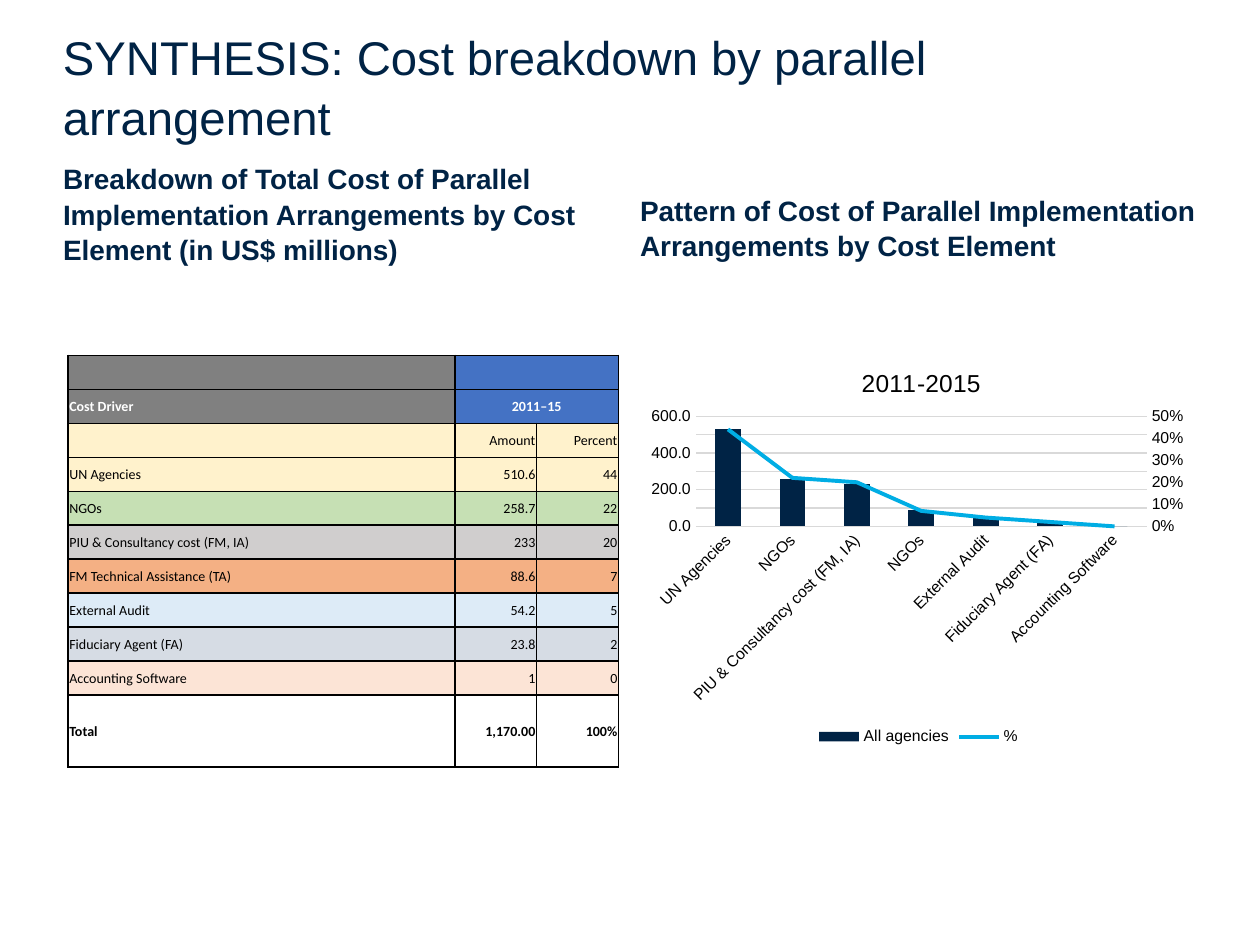
"""Build the cost breakdown slide with its table and combined chart."""
from dataclasses import dataclass
from lxml import etree
from pptx import Presentation
from pptx import util as u
from pptx.chart.data import CategoryChartData
from pptx.dml.color import RGBColor
from pptx.enum import chart as charts
from pptx.enum import text
from pptx.oxml import parse_xml
from pptx.oxml.ns import nsdecls, qn

@dataclass(frozen=True)
class Theme:
    navy: str = "002345"
    cyan: str = "00ADE4"
    black: str = "000000"
    white: str = "FFFFFF"
    grid: str = "D9D9D9"
    gray: str = "808080"
    blue: str = "4472C4"
    font: str = "Arial"
    table_font: str = "Calibri"
    title_size: int = 27
    heading_size: int = 16
    chart_title_size: int = 14
    label_size: int = 9
    table_size: int = 8

@dataclass(frozen=True)
class Heading:
    words: str
    left: float
    top: float
    width: float
    height: float
    size: int = 16

@dataclass(frozen=True)
class CostRow:
    cells: tuple[str, str, str]
    fill: str
    header: bool = False
    bold: bool = False
    height: float = 0.27

THEME = Theme()
HEADINGS = [
    Heading("SYNTHESIS: Cost breakdown by parallel arrangement", 0.5, 0.25, 9, 0.9, THEME.title_size),
    Heading("Breakdown of Total Cost of Parallel Implementation Arrangements "
            "by Cost Element (in US$ millions)", 0.5, 1.3, 4.42, 0.81, THEME.heading_size),
    Heading("Pattern of Cost of Parallel Implementation Arrangements by Cost Element",
            5.08, 1.5, 4.45, 0.58, THEME.heading_size),
]
COST_ROWS = [
    CostRow(("", "", ""), THEME.gray, header=True),
    CostRow(("Cost Driver", "2011–15", ""), THEME.gray, header=True, bold=True),
    CostRow(("", "Amount", "Percent"), "FFF2CC"),
    CostRow(("UN Agencies", "510.6", "44"), "FFF2CC"),
    CostRow(("NGOs", "258.7", "22"), "C6E0B4"),
    CostRow(("PIU & Consultancy cost (FM, IA)", "233", "20"), "D0CECE"),
    CostRow(("FM Technical Assistance (TA)", "88.6", "7"), "F4B084"),
    CostRow(("External Audit", "54.2", "5"), "DDEBF7"),
    CostRow(("Fiduciary Agent (FA)", "23.8", "2"), "D6DCE4"),
    CostRow(("Accounting Software", "1", "0"), "FCE4D6"),
    CostRow(("Total", "1,170.00", "100%"), THEME.white, bold=True, height=0.57),
]
COLUMN_WIDTHS = (3.07, 0.65, 0.65)
CATEGORIES = ["UN Agencies", "NGOs", "PIU & Consultancy cost (FM, IA)", "NGOs",
              "External Audit", "Fiduciary Agent (FA)", "Accounting Software"]
AMOUNTS = [530, 260, 230, 90, 50, 20, 0]
SHARES = [0.44, 0.22, 0.2, 0.07, 0.04, 0.02, 0]
LINE_PLOT = f"""<c:lineChart {nsdecls("c")}><c:grouping val="standard"/><c:varyColors val="0"/>
<c:marker val="1"/><c:axId val="501"/><c:axId val="502"/></c:lineChart>"""
SHARE_AXIS = f"""<c:valAx {nsdecls("c", "a")}><c:axId val="502"/>
<c:scaling><c:orientation val="minMax"/><c:max val="0.5"/><c:min val="0"/></c:scaling>
<c:delete val="0"/><c:axPos val="r"/><c:numFmt formatCode="0%" sourceLinked="0"/>
<c:majorTickMark val="none"/><c:minorTickMark val="none"/><c:tickLblPos val="nextTo"/>
<c:spPr><a:ln><a:noFill/></a:ln></c:spPr>
<c:crossAx val="501"/><c:crosses val="max"/><c:majorUnit val="0.1"/></c:valAx>"""
HIDDEN_AXIS = f"""<c:catAx {nsdecls("c")}><c:axId val="501"/><c:scaling><c:orientation val="minMax"/></c:scaling>
<c:delete val="1"/><c:axPos val="b"/><c:crossAx val="502"/><c:crosses val="autoZero"/></c:catAx>"""

def paint(fill, color: str) -> None:
    """Fill with one solid colour."""
    fill.solid()
    fill.fore_color.rgb = RGBColor.from_string(color)

def style_font(font, size: int, color: str, name: str, bold: bool = False) -> None:
    """Give a font its size, colour, face and weight."""
    font.size, font.name, font.bold = u.Pt(size), name, bold
    font.color.rgb = RGBColor.from_string(color)

def style_line(line, color: str, width: float) -> None:
    """Give a line its colour and width."""
    line.color.rgb, line.width = RGBColor.from_string(color), u.Pt(width)

def add_heading(slide, heading: Heading) -> None:
    """Add one bottom-anchored heading without insets."""
    places = (heading.left, heading.top, heading.width, heading.height)
    frame = slide.shapes.add_textbox(*map(u.Inches, places)).text_frame
    frame.word_wrap, frame.vertical_anchor = True, text.MSO_ANCHOR.BOTTOM
    frame.margin_left = frame.margin_right = frame.margin_top = frame.margin_bottom = 0
    frame.text = heading.words
    paragraph = frame.paragraphs[0]
    paragraph.line_spacing = 1.05
    bold = heading.size == THEME.heading_size
    style_font(paragraph.runs[0].font, heading.size, THEME.navy, THEME.font, bold)

def fill_cell(cell, row: CostRow, column: int) -> None:
    """Set the text, fill and borders of one table cell."""
    cell.margin_left = cell.margin_right = cell.margin_top = u.Inches(0.01)
    cell.margin_bottom, cell.vertical_anchor = 0, text.MSO_ANCHOR.MIDDLE
    paint(cell.fill, THEME.blue if column and row.header else row.fill)
    for position, side in enumerate(("lnL", "lnR", "lnT", "lnB")):
        cell._tc.get_or_add_tcPr().insert(position, parse_xml(
            f'<a:{side} {nsdecls("a")} w="12700"><a:solidFill>'
            f'<a:srgbClr val="{THEME.black}"/></a:solidFill></a:{side}>'))
    cell.text = row.cells[column]
    paragraph = cell.text_frame.paragraphs[0]
    if column:
        paragraph.alignment = text.PP_ALIGN.CENTER if row.header else text.PP_ALIGN.RIGHT
    for run in paragraph.runs:
        color = THEME.white if row.header else THEME.black
        style_font(run.font, THEME.table_size, color, THEME.table_font, row.bold)
    if not paragraph.runs:
        paragraph._p.get_or_add_endParaRPr().set("sz", str(THEME.table_size * 100))

def add_cost_table(slide) -> None:
    """Add the table of cost drivers."""
    places = (0.54, 2.82, sum(COLUMN_WIDTHS), sum(row.height for row in COST_ROWS))
    table = slide.shapes.add_table(len(COST_ROWS), len(COLUMN_WIDTHS), *map(u.Inches, places)).table
    table.first_row = table.horz_banding = False
    for column, width in zip(table.columns, COLUMN_WIDTHS):
        column.width = u.Inches(width)
    for index, row in enumerate(COST_ROWS):
        table.rows[index].height = u.Inches(row.height)
        for column in range(len(COLUMN_WIDTHS)):
            fill_cell(table.cell(index, column), row, column)
        if row.header:
            table.cell(index, 1).merge(table.cell(index, 2))

def place(parent, position: int, **settings: str | float) -> None:
    """Place a chart part by fractions of the chart area."""
    for old_layout in parent.findall(qn("c:layout")):
        parent.remove(old_layout)
    layout = parse_xml(f'<c:layout {nsdecls("c")}><c:manualLayout/></c:layout>')
    for name, value in settings.items():
        etree.SubElement(layout[0], qn(f"c:{name}")).set("val", str(value))
    parent.insert(position, layout)

def move_shares_to_line(chart) -> None:
    """Turn the second series into a line on a right-hand axis."""
    plot_area = chart._chartSpace.chart.plotArea
    bars = plot_area.find(qn("c:barChart"))
    shares = bars.findall(qn("c:ser"))[1]
    for setting in shares.findall(qn("c:invertIfNegative")):
        shares.remove(setting)
    line_plot = parse_xml(LINE_PLOT)
    line_plot.insert(2, shares)
    bars.addnext(line_plot)
    for axis in (HIDDEN_AXIS, SHARE_AXIS):
        plot_area.find(qn("c:valAx")).addnext(parse_xml(axis))
    place(plot_area, 0, layoutTarget="inner", xMode="edge", yMode="edge", x=0.1, y=0.18, w=0.81, h=0.27)

def add_cost_chart(slide) -> None:
    """Add the column and line chart of costs and shares."""
    data = CategoryChartData()
    data.categories = CATEGORIES
    data.add_series("All agencies", AMOUNTS, "#,##0.0")
    data.add_series("%", SHARES, "0%")
    places = map(u.Inches, (5.08, 2.72, 4.42, 3.24))
    chart = slide.shapes.add_chart(charts.XL_CHART_TYPE.COLUMN_CLUSTERED, *places, data).chart
    style_font(chart.font, THEME.label_size, THEME.black, THEME.font)
    title = chart.chart_title
    title.text_frame.text = "2011-2015"
    title_font = title.text_frame.paragraphs[0].runs[0].font
    style_font(title_font, THEME.chart_title_size, THEME.black, THEME.font)
    place(title._element, 1, xMode="edge", yMode="edge", x=0.39, y=0.05)
    chart.has_legend = True
    chart.legend.position, chart.legend.include_in_layout = charts.XL_LEGEND_POSITION.BOTTOM, False
    amounts, names = chart.value_axis, chart.category_axis
    for axis in (amounts, names):
        axis.major_tick_mark = axis.minor_tick_mark = charts.XL_TICK_MARK.NONE
    amounts.minimum_scale, amounts.maximum_scale, amounts.major_unit = 0, 600, 100
    amounts.tick_labels.number_format = "#,##0.0"
    amounts.tick_labels.number_format_is_linked = False
    amounts.format.line.fill.background()
    for line in (amounts.major_gridlines.format.line, names.format.line):
        style_line(line, THEME.grid, 0.75)
    style_font(names.tick_labels.font, THEME.label_size, THEME.black, THEME.font)
    names._element.find(qn("c:txPr")).find(qn("a:bodyPr")).set("rot", "-2700000")
    move_shares_to_line(chart)
    bars, lines = chart.plots
    bars.gap_width, bars.vary_by_categories = 150, False
    paint(bars.series[0].format.fill, THEME.navy)
    shares = lines.series[0]
    shares.smooth, shares.marker.style = False, charts.XL_MARKER_STYLE.NONE
    style_line(shares.format.line, THEME.cyan, 2.25)

presentation = Presentation()
presentation.slide_width, presentation.slide_height = u.Inches(10), u.Inches(7.5)
slide = presentation.slides.add_slide(presentation.slide_layouts[6])
for heading in HEADINGS:
    add_heading(slide, heading)
add_cost_table(slide)
add_cost_chart(slide)
presentation.save("out.pptx")
